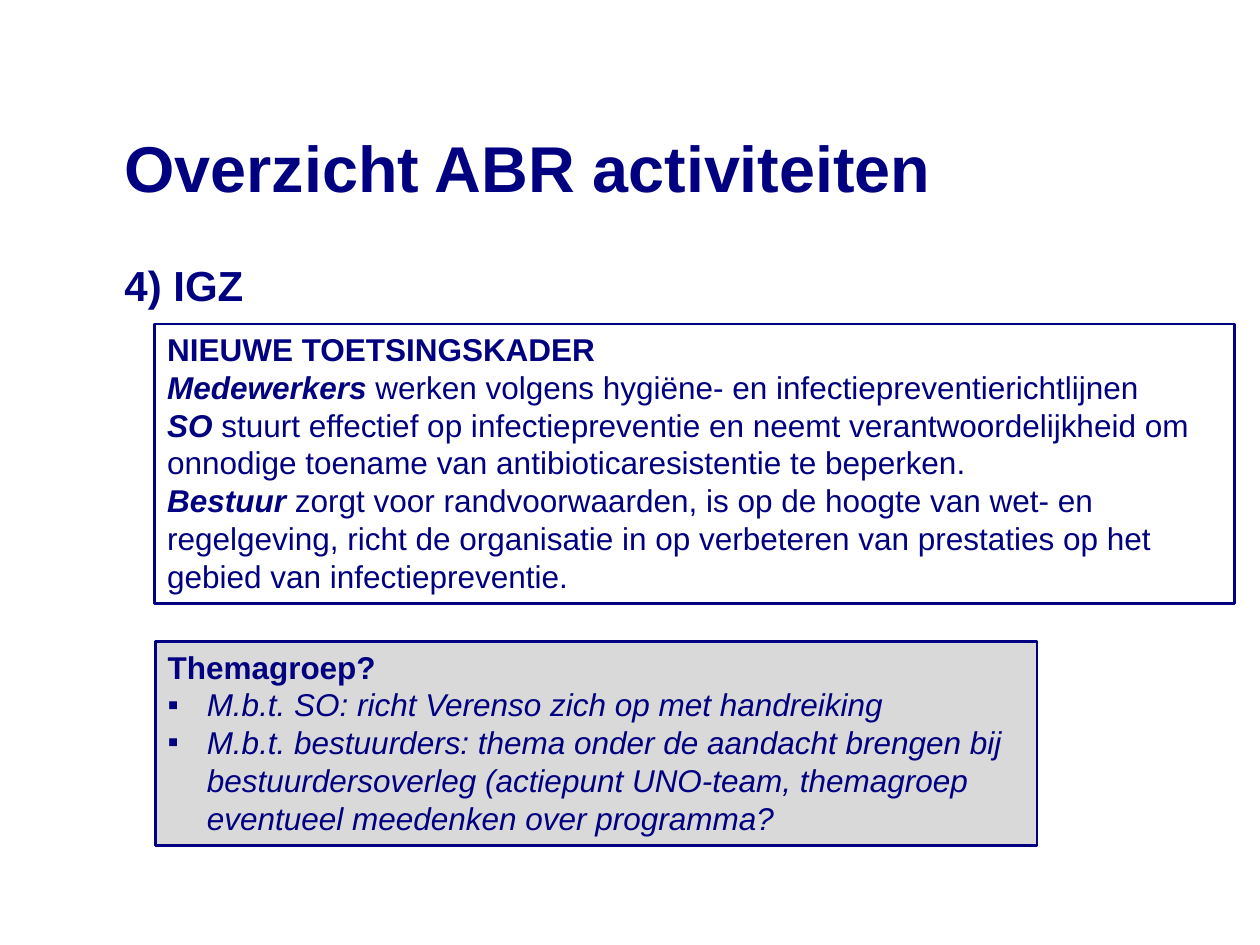
from lxml import etree
from pptx import Presentation
from pptx import util as u
from pptx.dml.color import RGBColor
from pptx.enum import shapes, text
from pptx.oxml.ns import qn

NAVY = "000080"
GREY = "D9D9D9"
BULLET_INDENT = u.Cm(0.79)


def color(hex_string):
    return RGBColor.from_string(hex_string)


def add_run(paragraph, content, size=18, bold=False, italic=False):
    run = paragraph.add_run()
    run.text = content
    font = run.font
    font.name = "Arial"
    font.size = u.Pt(size)
    font.bold = bold
    font.italic = italic
    font.color.rgb = color(NAVY)


def add_bullet(paragraph):
    properties = paragraph._p.get_or_add_pPr()
    properties.set("marL", str(BULLET_INDENT))
    properties.set("indent", str(-BULLET_INDENT))
    etree.SubElement(properties, qn("a:buFont")).set("typeface", "Arial")
    etree.SubElement(properties, qn("a:buChar")).set("char", "▪")


class SlideBuilder:
    """Holds the current slide and the style of its elements."""

    def __init__(self, presentation):
        self.slide = presentation.slides.add_slide(presentation.slide_layouts[5])

    def prepare_frame(self, shape, anchor, inset=True):
        frame = shape.text_frame
        frame.word_wrap = True
        frame.auto_size = text.MSO_AUTO_SIZE.NONE
        frame.vertical_anchor = anchor
        if not inset:
            frame.margin_left = frame.margin_right = 0
            frame.margin_top = frame.margin_bottom = 0
        frame.paragraphs[0].alignment = text.PP_ALIGN.LEFT
        return frame

    def title(self, content, left, top, width, height):
        shape = self.slide.shapes.title
        shape.left, shape.top = u.Cm(left), u.Cm(top)
        shape.width, shape.height = u.Cm(width), u.Cm(height)
        frame = self.prepare_frame(shape, text.MSO_ANCHOR.MIDDLE, inset=False)
        add_run(frame.paragraphs[0], content, size=37, bold=True)

    def heading(self, content, left, top, width, height):
        shape = self.slide.shapes.add_textbox(
            u.Cm(left), u.Cm(top), u.Cm(width), u.Cm(height))
        frame = self.prepare_frame(shape, text.MSO_ANCHOR.TOP, inset=False)
        frame.paragraphs[0].line_spacing = 1.1
        add_run(frame.paragraphs[0], content, size=24, bold=True)

    def box(self, heading, items, left, top, width, height, fill=None):
        """Items are (lead, body) pairs; an item without a lead is a bullet."""
        shape = self.slide.shapes.add_shape(
            shapes.MSO_SHAPE.RECTANGLE,
            u.Cm(left), u.Cm(top), u.Cm(width), u.Cm(height))
        shape.shadow.inherit = False
        if fill:
            shape.fill.solid()
            shape.fill.fore_color.rgb = color(fill)
        else:
            shape.fill.background()
        shape.line.color.rgb = color(NAVY)
        shape.line.width = u.Pt(1.5)
        frame = self.prepare_frame(shape, text.MSO_ANCHOR.TOP)
        add_run(frame.paragraphs[0], heading, bold=True)
        for lead, body in items:
            paragraph = frame.add_paragraph()
            paragraph.alignment = text.PP_ALIGN.LEFT
            if lead:
                add_run(paragraph, lead + " ", bold=True, italic=True)
            else:
                add_bullet(paragraph)
            add_run(paragraph, body, italic=not lead)


def main():
    presentation = Presentation()
    presentation.slide_width = u.Cm(25.4)
    presentation.slide_height = u.Cm(19.05)
    builder = SlideBuilder(presentation)

    builder.title("Overzicht ABR activiteiten", 2.51, 1.93, 20.98, 2.87)
    builder.heading("4) IGZ", 2.51, 5.13, 21.8, 1.2)
    builder.box("Themagroep?", [
        (None, "M.b.t. SO: richt Verenso zich op met handreiking"),
        (None, "M.b.t. bestuurders: thema onder de aandacht brengen bij "
               "bestuurdersoverleg (actiepunt UNO-team, themagroep "
               "eventueel meedenken over programma?"),
    ], 3.13, 12.93, 17.78, 4.11, fill=GREY)
    builder.box("NIEUWE TOETSINGSKADER", [
        ("Medewerkers", "werken volgens hygiëne- en infectiepreventierichtlijnen"),
        ("SO", "stuurt effectief op infectiepreventie en neemt "
               "verantwoordelijkheid om onnodige toename van "
               "antibioticaresistentie te beperken."),
        ("Bestuur", "zorgt voor randvoorwaarden, is op de hoogte van wet- en "
                    "regelgeving, richt de organisatie in op verbeteren van "
                    "prestaties op het gebied van infectiepreventie."),
    ], 3.12, 6.53, 21.77, 5.64)

    presentation.save("out.pptx")


if __name__ == "__main__":
    main()
